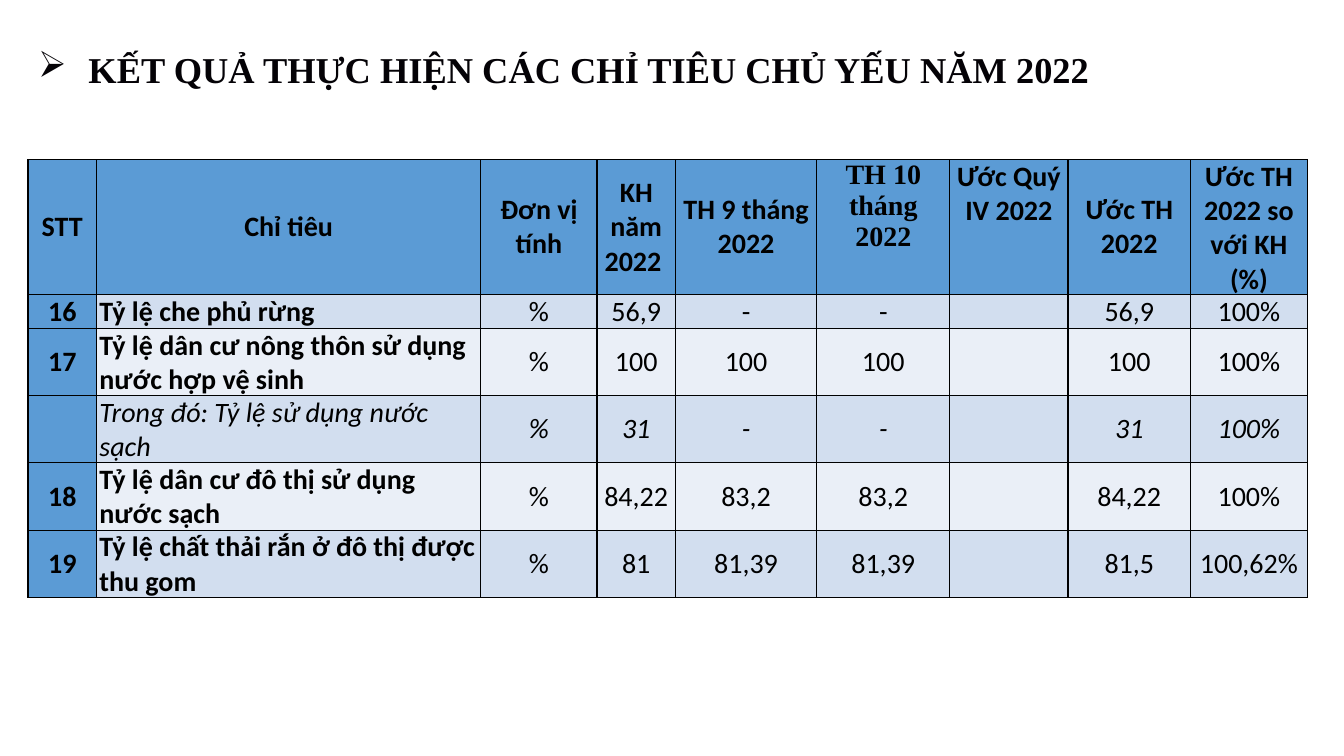
import pptx
import pptx.dml.color
import pptx.enum.text
import pptx.oxml
import pptx.oxml.ns
import pptx.util
from dataclasses import dataclass

Pt = pptx.util.Pt
PP_ALIGN = pptx.enum.text.PP_ALIGN
ANCHOR = pptx.enum.text.MSO_ANCHOR

HEADING = "KẾT QUẢ THỰC HIỆN CÁC CHỈ TIÊU CHỦ YẾU NĂM 2022"
COLUMNS = [  # heading, width
    ("STT", 49), ("Chỉ tiêu", 274.5), ("Đơn vị tính", 83),
    ("KH năm 2022 ", 56), ("TH 9 tháng 2022", 101),
    ("TH 10 tháng 2022", 95), ("Ước Quý IV 2022", 84.5),
    ("Ước TH 2022", 87.5), ("Ước TH 2022 so với KH (%)", 83.5),
]
INDICATORS = [
    ("16", "Tỷ lệ che phủ rừng", "%", "56,9", "-", "-", "", "56,9", "100%"),
    ("17", "Tỷ lệ dân cư nông thôn sử dụng nước hợp vệ sinh", "%",
     "100", "100", "100", "", "100", "100%"),
    ("", "Trong đó: Tỷ lệ sử dụng nước sạch", "%",
     "31", "-", "-", "", "31", "100%"),
    ("18", "Tỷ lệ dân cư đô thị sử dụng nước sạch", "%",
     "84,22", "83,2", "83,2", "", "84,22", "100%"),
    ("19", "Tỷ lệ chất thải rắn ở đô thị được thu gom", "%",
     "81", "81,39", "81,39", "", "81,5", "100,62%"),
]
ROW_HEIGHTS = [96.5, 23.5, 48, 48, 48, 48]
TOP_HEADINGS = {5: 36, 6: 12}  # column: space before
TEN_MONTH_COLUMN = 5
NAME_COLUMN = 1


@dataclass(frozen=True)
class Theme:
    heading: str = "040206"
    ink: str = "000000"
    accent: str = "5B9BD5"
    bands: tuple = ("D2DEEF", "EAEFF7")
    serif: str = "Times New Roman"
    sans: str = "Calibri"
    heading_size: float = 26
    table_size: float = 20
    border: float = 1


THEME = Theme()


def rgb(colour):
    return pptx.dml.color.RGBColor.from_string(colour)


def format_font(font, face, size, colour, bold, italic=False):
    font.name, font.size = face, Pt(size)
    font.color.rgb = rgb(colour)
    font.bold, font.italic = bold, italic


def parse_element(tag, attributes, inner=""):
    return pptx.oxml.parse_xml(
        f'<a:{tag} {pptx.oxml.ns.nsdecls("a")} {attributes}>{inner}</a:{tag}>')


def add_heading(slide):
    title = slide.shapes.title
    title.left, title.top, title.width, title.height = Pt(20), Pt(30), Pt(920), Pt(39)
    frame = title.text_frame
    frame.text = HEADING
    frame.word_wrap = True
    frame.auto_size = pptx.enum.text.MSO_AUTO_SIZE.SHAPE_TO_FIT_TEXT
    frame.vertical_anchor = ANCHOR.TOP
    paragraph = frame.paragraphs[0]
    paragraph.alignment = PP_ALIGN.LEFT
    format_font(paragraph.runs[0].font, THEME.serif, THEME.heading_size,
                THEME.heading, True)
    properties = paragraph._p.get_or_add_pPr()
    properties.set("marL", str(Pt(36)))
    properties.set("indent", str(Pt(-36)))
    properties.append(parse_element("buChar", 'char="➢"'))


def style_cell(cell, fill):
    """Set margins, black borders and fill; borders must precede the fill."""
    cell.margin_left = cell.margin_right = Pt(2)
    cell.margin_top = cell.margin_bottom = 0
    line = f'<a:solidFill><a:srgbClr val="{THEME.ink}"/></a:solidFill>'
    for side in ("lnL", "lnR", "lnT", "lnB"):
        cell._tc.get_or_add_tcPr().append(
            parse_element(side, f'w="{Pt(THEME.border)}"', line))
    cell.fill.solid()
    cell.fill.fore_color.rgb = rgb(fill)


def fill_cell(cell, row, column, text):
    is_header = row == 0
    is_subitem = not is_header and not INDICATORS[row - 1][0]
    in_accent = is_header or column == 0
    style_cell(cell, THEME.accent if in_accent else THEME.bands[(row - 1) % 2])
    at_top = is_header and column in TOP_HEADINGS
    cell.vertical_anchor = ANCHOR.TOP if at_top else ANCHOR.MIDDLE
    cell.text_frame.text = text
    paragraph = cell.text_frame.paragraphs[0]
    is_name = column == NAME_COLUMN and not is_header
    paragraph.alignment = PP_ALIGN.LEFT if is_name else PP_ALIGN.CENTER
    if at_top:
        paragraph.space_before = Pt(TOP_HEADINGS[column])
    face = THEME.serif if is_header and column == TEN_MONTH_COLUMN else THEME.sans
    bold = in_accent or (is_name and not is_subitem)
    for run in paragraph.runs:
        format_font(run.font, face, THEME.table_size, THEME.ink, bold, is_subitem)


def add_indicator_table(slide):
    widths = [width for _, width in COLUMNS]
    rows = [[heading for heading, _ in COLUMNS], *INDICATORS]
    table = slide.shapes.add_table(
        len(rows), len(widths), Pt(20), Pt(114),
        Pt(sum(widths)), Pt(sum(ROW_HEIGHTS))).table
    for column, width in zip(table.columns, widths):
        column.width = Pt(width)
    for row, height in zip(table.rows, ROW_HEIGHTS):
        row.height = Pt(height)
    for r, texts in enumerate(rows):
        for c, text in enumerate(texts):
            fill_cell(table.cell(r, c), r, c, text)


def main():
    deck = pptx.Presentation()
    deck.slide_width, deck.slide_height = Pt(960), Pt(540)
    slide = deck.slides.add_slide(deck.slide_layouts.get_by_name("Title Only"))
    add_heading(slide)
    add_indicator_table(slide)
    deck.save("out.pptx")


if __name__ == "__main__":
    main()
